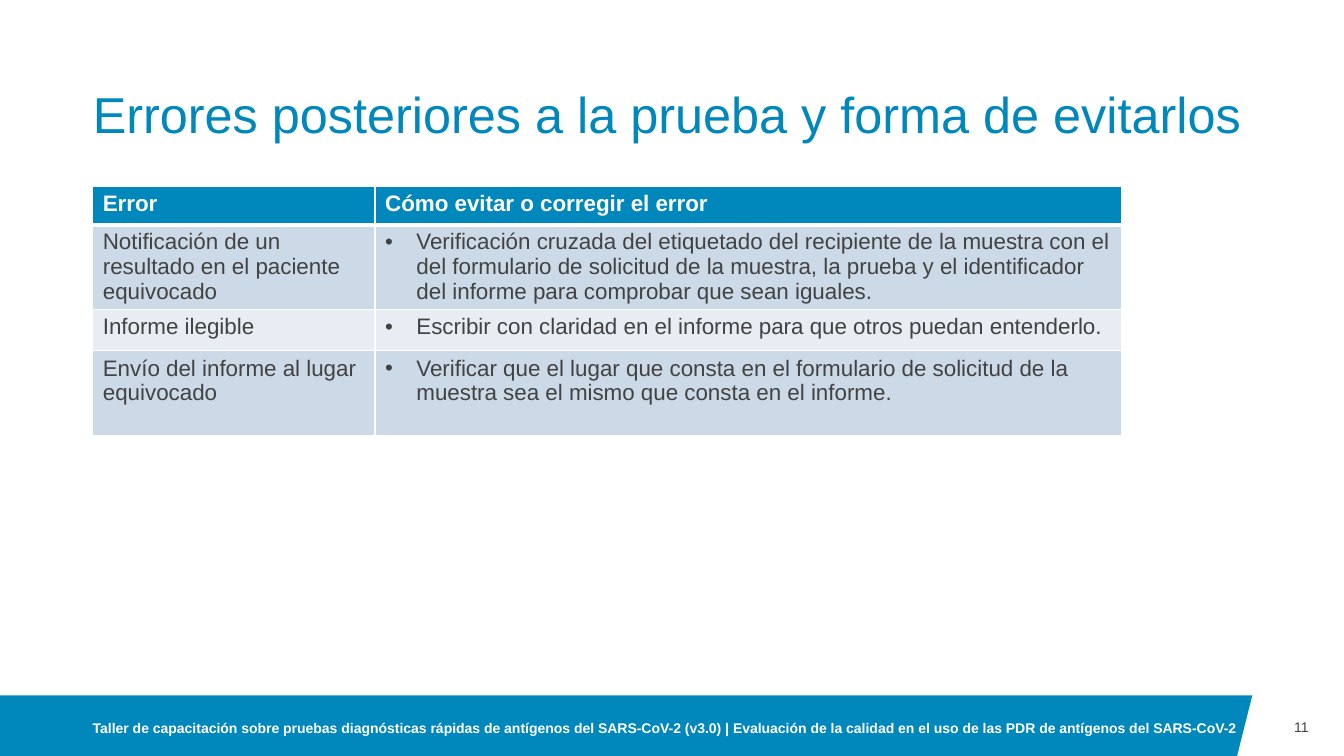
from dataclasses import dataclass

from lxml import etree
from pptx import Presentation, util as u
from pptx.dml.color import RGBColor
from pptx.enum import text as t
from pptx.oxml import ns

PX = 9144  # EMU per px, 100 px to the inch
FONT = "Arial"
HUES = {
    "blue": "0087BC",
    "ink": "424242",
    "white": "FFFFFF",
    "dark": "CCD9E7",
    "light": "E7EDF3",
}


@dataclass
class Box:
    x: int
    y: int
    w: int
    h: int

    def emu(self) -> list[int]:
        return [v * PX for v in (self.x, self.y, self.w, self.h)]


@dataclass
class Style:
    size: int
    hue: str
    bold: bool = False
    align: t.PP_ALIGN = t.PP_ALIGN.LEFT
    anchor: t.MSO_ANCHOR = t.MSO_ANCHOR.MIDDLE


@dataclass
class Row:
    error: str
    fix: str
    high: int
    fill: str


TITLE = "Errores posteriores a la prueba y forma de evitarlos"
FOOTER = (
    "Taller de capacitación sobre pruebas diagnósticas rápidas de antígenos del "
    "SARS-CoV-2 (v3.0) | Evaluación de la calidad en el uso de las PDR de "
    "antígenos del SARS-CoV-2"
)
ROWS = [
    Row("Error", "Cómo evitar o corregir el error", 38, "blue"),
    Row("Notificación de un resultado en el paciente equivocado",
        "Verificación cruzada del etiquetado del recipiente de la muestra con el "
        "del formulario de solicitud de la muestra, la prueba y el identificador "
        "del informe para comprobar que sean iguales.", 83, "dark"),
    Row("Informe ilegible",
        "Escribir con claridad en el informe para que otros puedan entenderlo.",
        41, "light"),
    Row("Envío del informe al lugar equivocado",
        "Verificar que el lugar que consta en el formulario de solicitud de la "
        "muestra sea el mismo que consta en el informe.", 84, "dark"),
]
COLS = [280, 740]


def color(hue: str) -> RGBColor:
    return RGBColor.from_string(HUES[hue])


def write(frame, words: str, style: Style) -> None:
    frame.text = words
    para = frame.paragraphs[0]
    para.alignment = style.align
    font = para.runs[0].font
    font.name, font.size, font.bold = FONT, u.Pt(style.size), style.bold
    font.color.rgb = color(style.hue)


def place(shape, box: Box, words: str, style: Style) -> None:
    shape.left, shape.top, shape.width, shape.height = box.emu()
    frame = shape.text_frame
    frame.word_wrap = True
    frame.auto_size = t.MSO_AUTO_SIZE.NONE
    frame.vertical_anchor = style.anchor
    frame.margin_left = frame.margin_right = 0
    frame.margin_top = frame.margin_bottom = 0
    write(frame, words, style)


def label(slide, box: Box, words: str, style: Style) -> None:
    place(slide.shapes.add_textbox(*box.emu()), box, words, style)


def bullet(para) -> None:
    props = para._p.get_or_add_pPr()
    props.set("marL", str(31 * PX))
    props.set("indent", str(-31 * PX))
    etree.SubElement(props, ns.qn("a:buFont")).set("typeface", FONT)
    etree.SubElement(props, ns.qn("a:buChar")).set("char", "•")


def border(cell, base: int) -> None:
    props = cell._tc.get_or_add_tcPr()
    widths = {"lnL": 1, "lnR": 1, "lnT": 1, "lnB": base}
    for spot, (side, width) in enumerate(widths.items()):
        line = etree.Element(ns.qn(f"a:{side}"), w=str(u.Pt(width)))
        fill = etree.SubElement(line, ns.qn("a:solidFill"))
        etree.SubElement(fill, ns.qn("a:srgbClr")).set("val", HUES["white"])
        props.insert(spot, line)


def band(slide) -> None:
    pen = slide.shapes.build_freeform(0, 690, scale=PX)
    pen.add_line_segments([(1242, 690), (1227, 750), (0, 750)])
    shape = pen.convert_to_shape()
    shape.shadow.inherit = False
    shape.fill.solid()
    shape.fill.fore_color.rgb = color("blue")
    shape.line.fill.background()


def grid(slide) -> None:
    box = Box(92, 185, sum(COLS), sum(row.high for row in ROWS))
    table = slide.shapes.add_table(len(ROWS), len(COLS), *box.emu()).table
    for col, width in zip(table.columns, COLS):
        col.width = width * PX
    for i, row in enumerate(ROWS):
        table.rows[i].height = row.high * PX
        head = i == 0
        style = Style(16, "white" if head else "ink", head)
        for j, words in enumerate((row.error, row.fix)):
            cell = table.cell(i, j)
            write(cell.text_frame, words, style)
            cell.fill.solid()
            cell.fill.fore_color.rgb = color(row.fill)
            # The header has a thick rule below it
            border(cell, 3 if i == 0 else 1)
            if j == 1 and not head:
                bullet(cell.text_frame.paragraphs[0])
    # Both sides of the rule below the header must agree
    for cell in table.rows[1].cells:
        cell._tc.tcPr.find(ns.qn("a:lnT")).set("w", str(u.Pt(3)))


def main() -> None:
    deck = Presentation()
    deck.slide_width, deck.slide_height = 1333 * PX, 750 * PX
    slide = deck.slides.add_slide(deck.slide_layouts[5])

    # Footer band
    band(slide)

    # Title
    title = slide.shapes.title
    place(title, Box(92, 40, 1150, 103), TITLE,
          Style(36, "blue", anchor=t.MSO_ANCHOR.BOTTOM))
    title.text_frame.paragraphs[0].line_spacing = 0.9

    # Table of errors
    grid(slide)

    # Footer and page number
    label(slide, Box(92, 695, 1143, 55), FOOTER, Style(10, "white", True))
    label(slide, Box(1242, 690, 56, 63), "11",
          Style(10, "ink", align=t.PP_ALIGN.RIGHT))

    deck.save("out.pptx")


if __name__ == "__main__":
    main()
